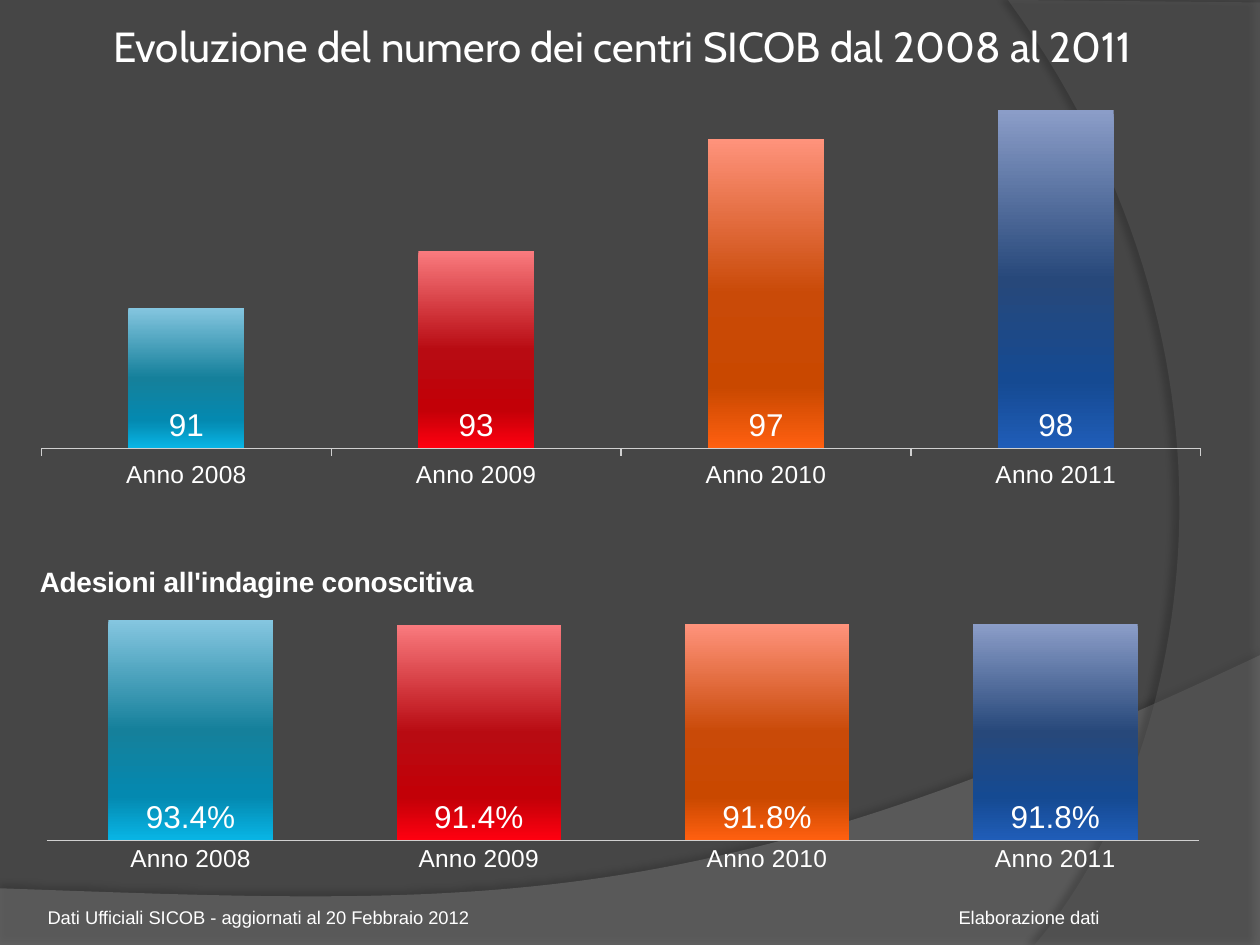
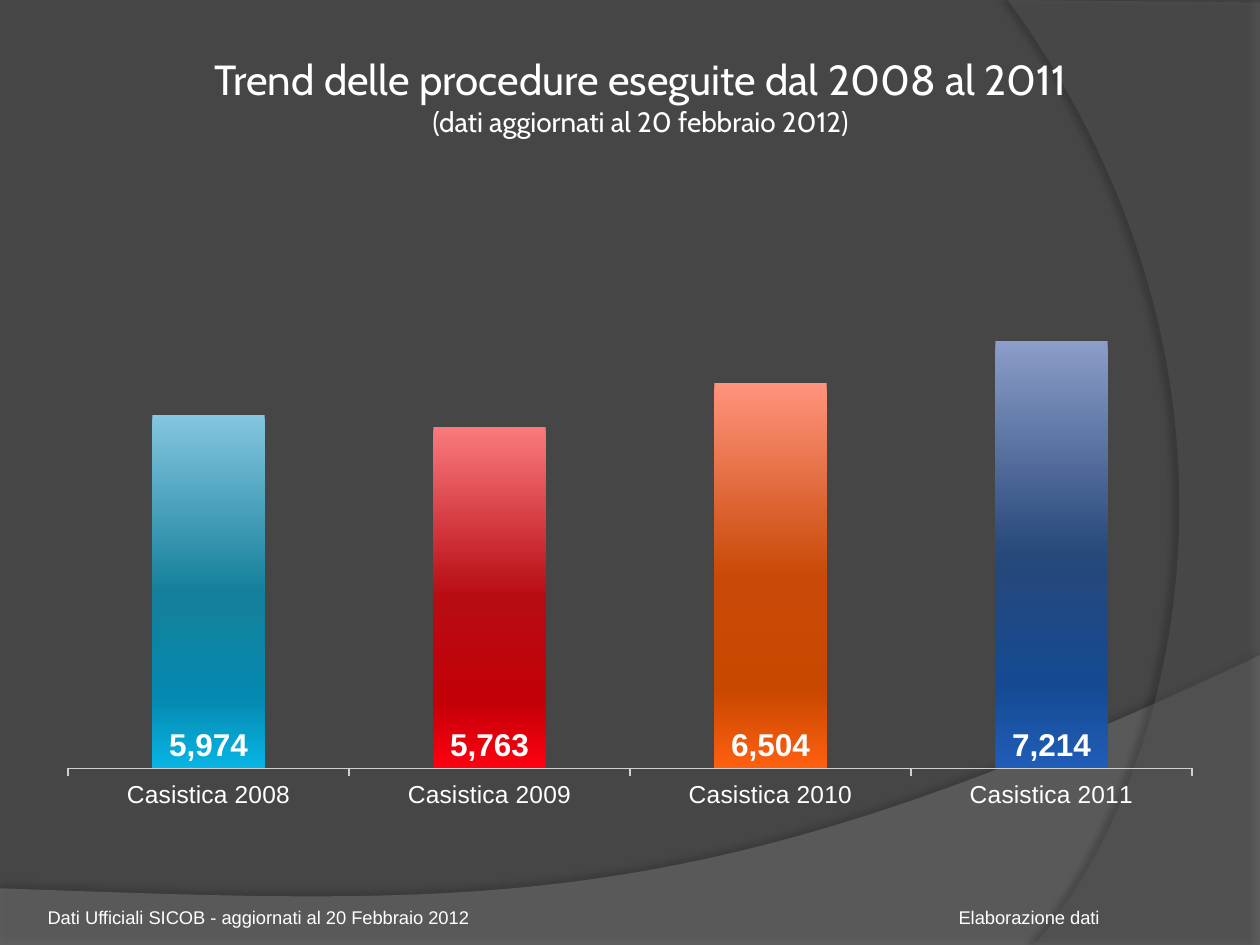
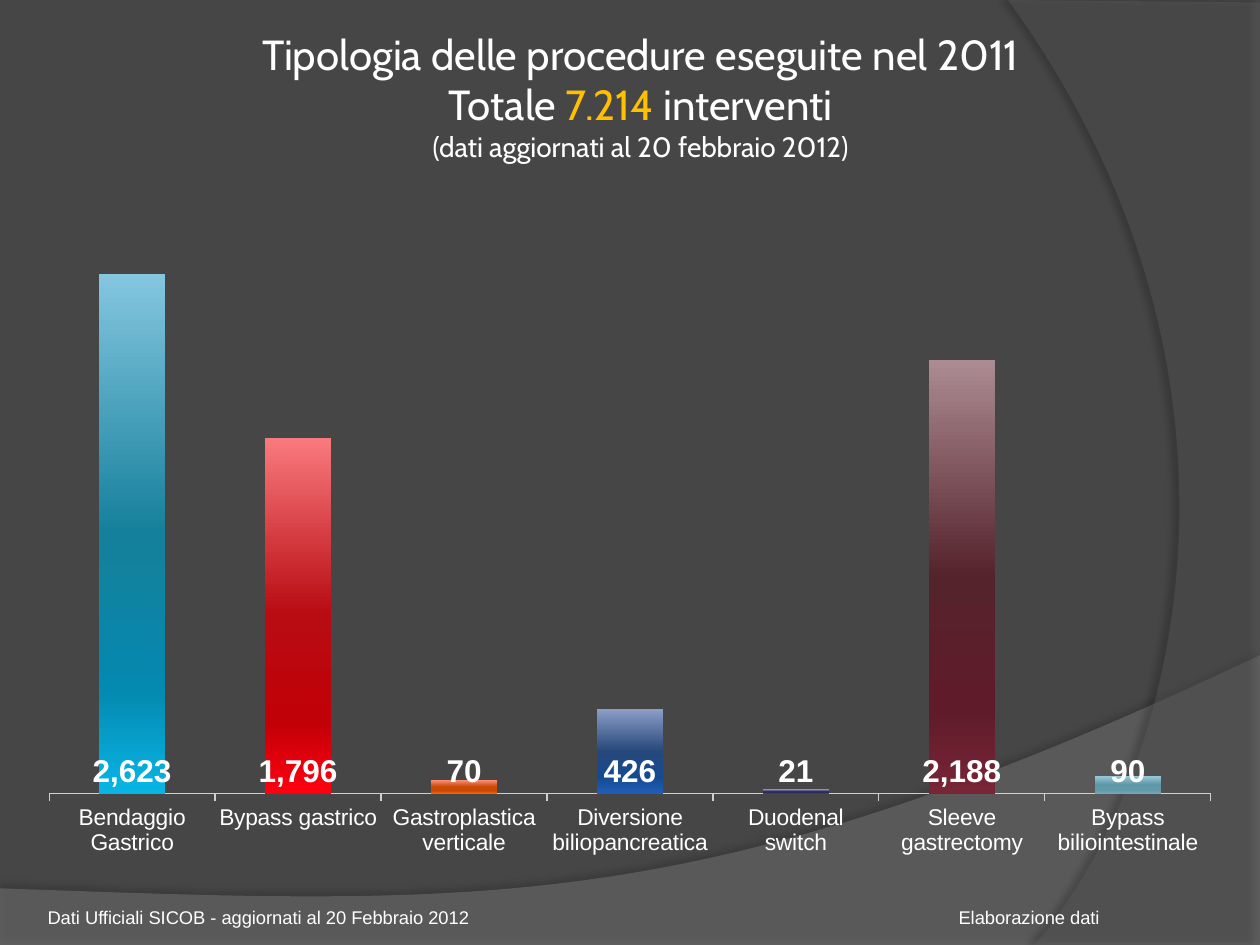
"""Build three slides on the SICOB centres and their procedures."""
from dataclasses import dataclass
from typing import NamedTuple

from lxml import etree
from pptx import Presentation
from pptx import util as u
from pptx.chart import data as cd
from pptx.dml.color import RGBColor
from pptx.enum import chart as ch
from pptx.enum import text as tx
from pptx.oxml.ns import qn

HUES = {"back": "464646", "text": "FFFFFF", "gold": "FFC000", "axis": "D0D0D0",
        "wave": "7F7F7F", "arc": "5E5E5E", "shade": "000000"}
RAMPS = {
    "teal": ("85C6E0", "15809B", "0489B0", "08B5E5"),
    "red": ("F97A7E", "B80B12", "C20007", "FF0010"),
    "rust": ("FF937C", "C94A08", "C94800", "FF6010"),
    "navy": ("8B9DC8", "27487A", "154A92", "205DB8"),
    "plum": ("9092AE", "2E2F55", "2A2C66", "3A3E80"),
    "wine": ("AC8B92", "55232C", "5F1B2A", "782536"),
    "pale": ("9CCBD8", "5D98A8", "6299A8", "6FA8BA"),
}
STOPS = (0, 50, 80, 100)
YEARS = ("2008", "2009", "2010", "2011")
SANS, HEAD = "Arial", "Cabin"
DATED = "(dati aggiornati al 20 febbraio 2012)"


class Box(NamedTuple):
    """Left, top, width and height in inches."""
    x: float
    y: float
    w: float
    h: float


class Run(NamedTuple):
    """A piece of a title line with its colour."""
    words: str
    hue: str = "text"


class Line(NamedTuple):
    """A title line with its size in points."""
    runs: tuple[Run, ...]
    size: int = 24


class Sweep(NamedTuple):
    """A backdrop outline: corners, then a curve back to the start."""
    ends: tuple
    curve: tuple
    hue: str
    alpha: int
    shade: int
    dist: float
    angle: int


@dataclass(frozen=True)
class Bars:
    """A column chart with its plot area."""
    box: Box
    plot: Box
    cats: tuple[str, ...]
    vals: tuple[float, ...]
    low: float
    high: float
    form: str = "#,##0"
    size: int = 14
    gap: int = 150
    bold: bool = True
    ticks: bool = True
    title: str = ""


@dataclass(frozen=True)
class Page:
    """A slide: its title and charts."""
    box: Box
    lines: tuple[Line, ...]
    charts: tuple[Bars, ...]


SWEEPS = (
    Sweep(((0, 7.05), (0, 7.51), (10, 7.51), (10, 5.2)),
          ((10, 5.2), (5.59, 7.29), (3.91, 7.19), (0, 7.05)),
          "wave", 45, 35, 3.5, 270),
    Sweep(((10, 0.02), (10, 7.5), (8.21, 7.5)),
          ((8.21, 7.5), (9.35, 6.19), (10.18, 3), (8, 0)),
          "arc", 40, 45, 4, 180),
)
TITLE = Box(0.28, 0.13, 9.61, 1.26)
ANNI = tuple(f"Anno {year}" for year in YEARS)
PAGES = (
    Page(Box(0, 0.04, 9.88, 0.64),
         (Line((Run("Evoluzione del numero dei centri SICOB dal 2008 al 2011"),)),),
         (Bars(Box(0.18, 4.3, 9.53, 2.68), Box(0.37, 4.8, 9.15, 1.87), ANNI,
               (0.934, 0.914, 0.918, 0.918), 0, 1, "0.0%", gap=75, bold=False,
               ticks=False, title="Adesioni all'indagine conoscitiva"),
          Bars(Box(0.14, 0.36, 9.59, 3.59), Box(0.33, 0.43, 9.2, 3.13), ANNI,
               (91, 93, 97, 98), 86, 100, bold=False))),
    Page(TITLE,
         (Line((Run("Trend delle procedure eseguite dal 2008 al 2011"),)),
          Line((Run(DATED),), 16)),
         (Bars(Box(0.35, 2.25, 9.29, 4.26), Box(0.54, 2.34, 8.92, 3.76),
               tuple(f"Casistica {year}" for year in YEARS),
               (5974, 5763, 6504, 7214), 0, 8000),)),
    Page(TITLE,
         (Line((Run("Tipologia delle procedure eseguite nel 2011"),)),
          Line((Run("Totale "), Run("7.214", "gold"), Run(" interventi"))),
          Line((Run(DATED),), 16)),
         (Bars(Box(0.2, 1.47, 9.61, 5.43), Box(0.39, 1.58, 9.22, 4.72),
               ("Bendaggio Gastrico", "Bypass gastrico", "Gastroplastica verticale",
                "Diversione biliopancreatica", "Duodenal switch",
                "Sleeve gastrectomy", "Bypass biliointestinale"),
               (2623, 1796, 70, 426, 21, 2188, 90), 0, 3000, size=13),)),
)


def tint(name: str) -> RGBColor:
    """Return a named colour."""
    return RGBColor.from_string(HUES[name])


def style(font, size: float, face: str = SANS, bold: bool = False) -> None:
    """Set a font in the text colour."""
    font.name, font.size, font.bold = face, u.Pt(size), bold
    font.color.rgb = tint("text")


def place(box: Box) -> tuple:
    """Return a box as lengths."""
    return tuple(u.Inches(side) for side in box)


def node(root, tag: str, **attrs):
    """Add a child element with attributes."""
    return etree.SubElement(root, qn(tag), {key: str(val) for key, val in attrs.items()})


def bend(curve: tuple, steps: int = 60) -> list[tuple]:
    """Return points along a cubic curve."""
    rows = []
    for step in range(1, steps + 1):
        t = step / steps
        parts = ((1 - t) ** 3, 3 * t * (1 - t) ** 2, 3 * t * t * (1 - t), t ** 3)
        rows.append(tuple(sum(p * spot[axis] for p, spot in zip(parts, curve))
                          for axis in (0, 1)))
    return rows


def sweep(slide, item: Sweep):
    """Draw a translucent backdrop shape with a soft shadow."""
    spots = [(u.Inches(x), u.Inches(y)) for x, y in (*item.ends, *bend(item.curve))]
    maker = slide.shapes.build_freeform(*spots[0])
    maker.add_line_segments(spots[1:], close=True)
    shape = maker.convert_to_shape()
    shape.fill.solid()
    shape.fill.fore_color.rgb = tint(item.hue)
    shape.line.fill.background()
    shape.shadow.inherit = False
    paint = shape.element.spPr.find(qn("a:solidFill"))
    node(paint[0], "a:alpha", val=item.alpha * 1000)
    glow = node(shape.element.spPr.find(qn("a:effectLst")), "a:outerShdw",
                blurRad=u.Pt(4), dist=u.Pt(item.dist), dir=item.angle * 60000,
                rotWithShape=0)
    node(node(glow, "a:srgbClr", val=HUES["shade"]), "a:alpha", val=item.shade * 1000)
    return shape


def footer(slide):
    """Write the footer with a tab between its two parts."""
    shape = slide.shapes.add_textbox(*place(Box(0.28, 7.14, 9.57, 0.22)))
    shape.text_frame.word_wrap = True
    para = shape.text_frame.paragraphs[0]
    para.text = "Dati Ufficiali SICOB - aggiornati al 20 Febbraio 2012\tElaborazione dati"
    tabs = node(para._p.get_or_add_pPr(), "a:tabLst")
    node(tabs, "a:tab", pos=u.Inches(7.23), algn="l")
    style(para.font, 10.5)
    return shape


def dress(deck, slide) -> None:
    """Put the backdrop and footer on the master, by way of a slide."""
    master = deck.slide_master
    master.background.fill.solid()
    master.background.fill.fore_color.rgb = tint("back")
    parts = [sweep(slide, item) for item in SWEEPS] + [footer(slide)]
    for rank, part in enumerate(parts):
        part.element.find(".//" + qn("p:cNvPr")).set("id", str(20 + rank))
        master.shapes.element.insert(2 + rank, part.element)


def head(slide, page: Page) -> None:
    """Fill and place the title."""
    shape = slide.shapes.title
    shape.left, shape.top, shape.width, shape.height = place(page.box)
    frame = shape.text_frame
    frame.word_wrap, frame.auto_size = True, tx.MSO_AUTO_SIZE.NONE
    frame.vertical_anchor = tx.MSO_ANCHOR.MIDDLE
    frame.margin_left = frame.margin_right = u.Inches(0.05)
    frame.margin_top = frame.margin_bottom = u.Inches(0.05)
    for rank, line in enumerate(page.lines):
        para = frame.add_paragraph() if rank else frame.paragraphs[0]
        para.alignment = tx.PP_ALIGN.CENTER
        style(para.font, line.size, HEAD)
        for piece in line.runs:
            run = para.add_run()
            run.text = piece.words
            if piece.hue != "text":
                run.font.color.rgb = tint(piece.hue)


def pin(root, spot: int, **sides: float) -> None:
    """Fix the place of a chart part by shares of the chart."""
    for old in root.findall(qn("c:layout")):
        root.remove(old)
    layout = etree.Element(qn("c:layout"))
    root.insert(spot, layout)
    manual = node(layout, "c:manualLayout")
    if "w" in sides:
        node(manual, "c:layoutTarget", val="inner")
    for side in "xy":
        node(manual, f"c:{side}Mode", val="edge")
    for side, share in sides.items():
        node(manual, f"c:{side}", val=round(share, 4))


def shade(point, ramp: tuple) -> None:
    """Fill a bar with a gradient from top to bottom."""
    fill = point.format.fill
    fill.gradient()
    fill.gradient_angle = 270
    stops = point.format.element.find(".//" + qn("a:gsLst"))
    for old in list(stops):
        stops.remove(old)
    for stop, hue in zip(STOPS, ramp):
        node(node(stops, "a:gs", pos=stop * 1000), "a:srgbClr", val=hue)


def bars(slide, item: Bars) -> None:
    """Draw a column chart."""
    data = cd.CategoryChartData()
    data.categories = item.cats
    data.add_series("Series 1", item.vals)
    chart = slide.shapes.add_chart(ch.XL_CHART_TYPE.COLUMN_CLUSTERED,
                                   *place(item.box), data).chart
    style(chart.font, 10)
    chart.has_legend = False
    chart.has_title = bool(item.title)
    if item.title:
        para = chart.chart_title.text_frame.paragraphs[0]
        para.text = item.title
        style(para.font, 16, bold=True)
        pin(chart.chart_title.element, 1, x=0.01, y=0.05)
    box, area = item.box, item.plot
    pin(chart.element.find(".//" + qn("c:plotArea")), 0,
        x=(area.x - box.x) / box.w, y=(area.y - box.y) / box.h,
        w=area.w / box.w, h=area.h / box.h)
    scale = chart.value_axis
    scale.minimum_scale, scale.maximum_scale = item.low, item.high
    scale.has_major_gridlines = scale.visible = False
    base = chart.category_axis
    base.major_tick_mark = ch.XL_TICK_MARK.OUTSIDE if item.ticks else ch.XL_TICK_MARK.NONE
    base.format.line.color.rgb = tint("axis")
    base.format.line.width = u.Pt(0.75)
    style(base.tick_labels.font, item.size)
    plot = chart.plots[0]
    plot.gap_width, plot.vary_by_categories = item.gap, False
    plot.has_data_labels = True
    marks = plot.data_labels
    marks.show_value = True
    marks.position = ch.XL_LABEL_POSITION.INSIDE_BASE
    marks.number_format, marks.number_format_is_linked = item.form, False
    style(marks.font, 18, bold=item.bold)
    for rank, ramp in zip(range(len(item.vals)), RAMPS.values()):
        shade(plot.series[0].points[rank], ramp)


def main() -> None:
    """Build and save the deck."""
    deck = Presentation()
    deck.slide_width, deck.slide_height = u.Inches(10), u.Inches(7.5)
    for rank, page in enumerate(PAGES):
        slide = deck.slides.add_slide(deck.slide_layouts[5])
        if not rank:
            dress(deck, slide)
        head(slide, page)
        for item in page.charts:
            bars(slide, item)
    deck.save("out.pptx")


if __name__ == "__main__":
    main()
